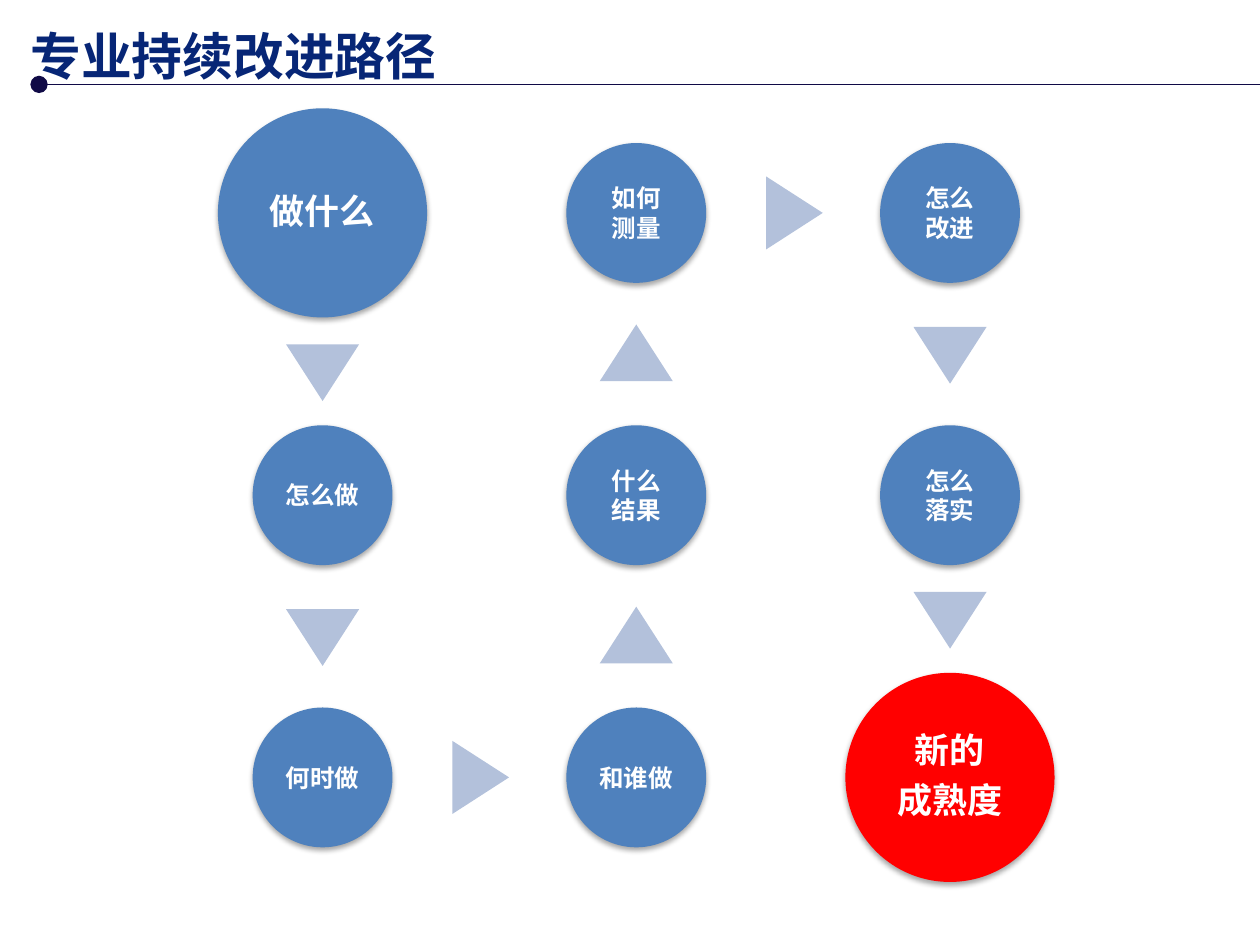
from itertools import pairwise

from lxml import etree
from pptx import Presentation
from pptx.dml.color import RGBColor
from pptx.enum.shapes import MSO_CONNECTOR as Connector, MSO_SHAPE as Shape
from pptx.enum.text import MSO_ANCHOR as Anchor, PP_ALIGN as Align
from pptx.oxml.ns import qn
from pptx.util import Inches, Pt

COLORS = {"title": "072676", "rule": "100A46", "step": "4F81BD",
          "goal": "FF0000", "arrow": "B3C1DB", "text": "FFFFFF", "shadow": "000000"}
FONT = "Noto Sans CJK SC"
COLUMNS = [2.56 + 2.49 * i for i in range(3)]
ROWS = [1.69 + 2.24 * i for i in range(3)]
SMALL, LARGE = 1.11, 1.66
ARROW_WIDTH, ARROW_HEIGHT = 0.58, 0.45
ARROW_LEAD = 0.01

# Lines of text, column, row, in the order of the path
STEPS = [
    (["做什么"], 0, 0), (["怎么做"], 0, 1), (["何时做"], 0, 2),
    (["和谁做"], 1, 2), (["什么", "结果"], 1, 1), (["如何", "测量"], 1, 0),
    (["怎么", "改进"], 2, 0), (["怎么", "落实"], 2, 1), (["新的", "成熟度"], 2, 2),
]


def color(name):
    return RGBColor.from_string(COLORS[name])


def apply(target, values):
    for name, value in values.items():
        setattr(target, name, value)


class PathSlide:
    def __init__(self, deck):
        self.page = deck.slides.add_slide(deck.slide_layouts[5])

    def set_text(self, box, lines, size, color_name, inset, **para_format):
        frame = box.text_frame
        margins = {f"margin_{side}": Inches(inset) for side in ("left", "right", "top", "bottom")}
        apply(frame, {"word_wrap": True, "vertical_anchor": Anchor.MIDDLE, **margins})
        for number, line in enumerate(lines):
            para = frame.add_paragraph() if number else frame.paragraphs[0]
            apply(para, para_format)
            span = para.add_run()
            span.text = line
            apply(span.font, {"size": Pt(size), "bold": True, "name": FONT})
            span.font.color.rgb = color(color_name)
            etree.SubElement(span.font._element, qn("a:ea"), typeface=FONT)

    def title(self, text):
        box = self.page.shapes.title
        apply(box, {"left": Inches(0.24), "top": Inches(0.19),
                    "width": Inches(6.72), "height": Inches(0.49)})
        self.set_text(box, [text], 29, "title", 0, alignment=Align.LEFT)

    def rule(self, left, right, y):
        """Draw a horizontal line that starts with a dot."""
        rule = self.page.shapes.add_connector(
            Connector.STRAIGHT, Inches(left), Inches(y), Inches(right), Inches(y))
        rule.line.color.rgb = color("rule")
        rule.line.width = Pt(0.5)
        etree.SubElement(rule.get_or_add_ln(), qn("a:headEnd"), type="oval", w="lg", len="lg")
        etree.SubElement(rule._element.spPr, qn("a:effectLst"))

    def solid(self, kind, x, y, width, height, fill):
        """Add a borderless shape centred on x, y."""
        shape = self.page.shapes.add_shape(
            kind, Inches(x - width / 2), Inches(y - height / 2), Inches(width), Inches(height))
        shape.shadow.inherit = False
        shape.fill.solid()
        shape.fill.fore_color.rgb = color(fill)
        shape.line.fill.background()
        return shape

    def circle(self, lines, x, y, diameter, fill):
        shape = self.solid(Shape.OVAL, x, y, diameter, diameter, fill)
        self.drop_shadow(shape)
        if diameter == LARGE:
            self.set_text(shape, lines, 20, "text", 0.03, alignment=Align.CENTER,
                          line_spacing=0.9, space_after=Pt(7))
        else:
            self.set_text(shape, lines, 14, "text", 0.02, alignment=Align.CENTER)

    def drop_shadow(self, shape):
        effects = shape._element.spPr.find(qn("a:effectLst"))
        shadow = etree.SubElement(effects, qn("a:outerShdw"), blurRad=str(Pt(3.1)),
                                  dist=str(Pt(1.8)), dir="5400000", rotWithShape="0")
        tint = etree.SubElement(shadow, qn("a:srgbClr"), val=COLORS["shadow"])
        etree.SubElement(tint, qn("a:alpha"), val="35000")

    def arrow(self, start, end):
        """Point from one circle to the next, in the middle of the gap."""
        (x1, y1, size1), (x2, y2, size2) = start, end
        shift = (size1 - size2) / 4 + ARROW_LEAD
        across = (x2 > x1) - (x2 < x1)
        down = (y2 > y1) - (y2 < y1)
        shape = self.solid(Shape.ISOSCELES_TRIANGLE, (x1 + x2) / 2 + across * shift,
                           (y1 + y2) / 2 + down * shift, ARROW_WIDTH, ARROW_HEIGHT, "arrow")
        shape.rotation = 90 if across else 90 + 90 * down


def main():
    deck = Presentation()
    apply(deck, {"slide_width": Inches(10), "slide_height": Inches(7.5)})
    slide = PathSlide(deck)
    slide.title("专业持续改进路径")
    slide.rule(0.31, 10, 0.67)
    last = len(STEPS) - 1
    places = []
    for number, (lines, column, row) in enumerate(STEPS):
        diameter = LARGE if number in (0, last) else SMALL
        place = (COLUMNS[column], ROWS[row], diameter)
        places.append(place)
        slide.circle(lines, *place, "goal" if number == last else "step")
    for start, end in pairwise(places):
        slide.arrow(start, end)
    deck.save("out.pptx")


if __name__ == "__main__":
    main()
